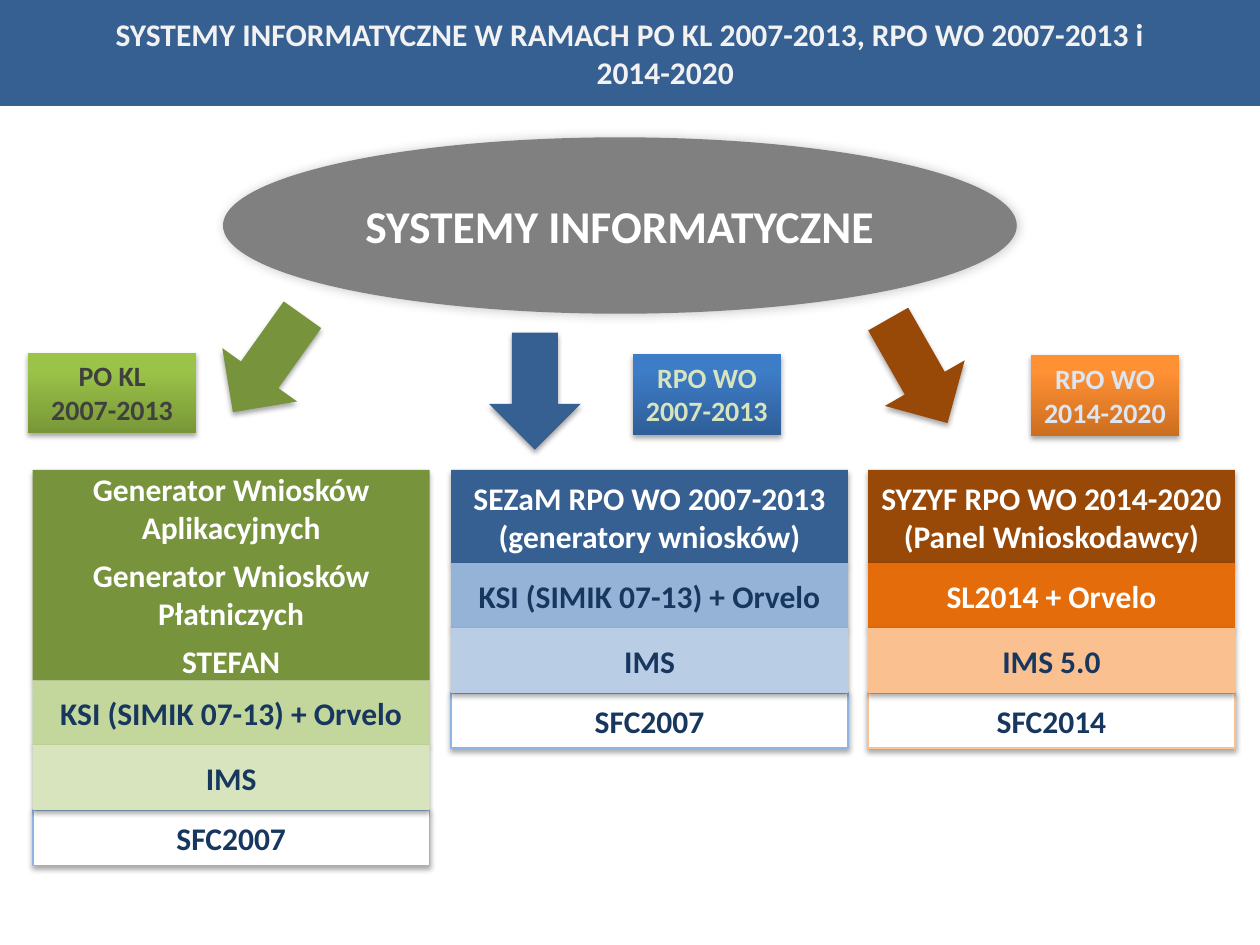
from lxml import etree
from pptx import Presentation
from pptx.dml.color import RGBColor
from pptx.enum.shapes import MSO_SHAPE
from pptx.enum.text import MSO_ANCHOR, MSO_AUTO_SIZE, PP_ALIGN
from pptx.oxml.ns import qn
from pptx.util import Inches, Pt

RECT, OVAL, ARROW = MSO_SHAPE.RECTANGLE, MSO_SHAPE.OVAL, MSO_SHAPE.DOWN_ARROW
TOP, MIDDLE = MSO_ANCHOR.TOP, MSO_ANCHOR.MIDDLE
CENTER, NO_FIT = PP_ALIGN.CENTER, MSO_AUTO_SIZE.NONE
WHITE, NAVY, BLUE, GREEN, BROWN = "FFFFFF", "17375E", "376092", "77933C", "984807"
ROW_HEIGHTS = (0.515, 0.515, 0.44)
STACK_TOP = 3.73


def rgb(value):
    """Turn a hex string into a colour."""
    return RGBColor.from_string(value)


def add_shadow(sp, blur=3.1, dist=1.8, angle=90, alpha=35):
    """Give a shape a soft black outer shadow."""
    sp.shadow.inherit = False
    effects = sp._element.spPr.find(qn("a:effectLst"))
    outer = etree.SubElement(effects, qn("a:outerShdw"), blurRad=str(Pt(blur)),
                             dist=str(Pt(dist)), dir=str(angle * 60000), rotWithShape="0")
    color = etree.SubElement(outer, qn("a:srgbClr"), val="000000")
    etree.SubElement(color, qn("a:alpha"), val=str(alpha * 1000))


def add_text(sp, lines, size, color, after=0, anchor=MIDDLE):
    """Write centred bold paragraphs into a shape."""
    tf = sp.text_frame
    tf.word_wrap, tf.auto_size, tf.vertical_anchor = True, NO_FIT, anchor
    for i, line in enumerate(lines):
        p = tf.add_paragraph() if i else tf.paragraphs[0]
        p.alignment, p.space_after = CENTER, Pt(after)
        r = p.add_run()
        r.text = line
        r.font.name, r.font.size, r.font.bold = "Calibri", Pt(size), True
        r.font.color.rgb = rgb(color)


def add_box(s, kind, box, fill, line=None):
    """Add a preset shape with a solid fill and an optional outline."""
    sp = s.shapes.add_shape(kind, *map(Inches, box))
    sp.fill.solid()
    sp.fill.fore_color.rgb = rgb(fill)
    if line:
        sp.line.color.rgb = rgb(line)
        sp.line.width = Pt(1)
    else:
        sp.line.fill.background()
    return sp


def add_title(s, box, text):
    """Format the title placeholder as a banner with a hanging indent."""
    sp = s.shapes.title
    sp.left, sp.top, sp.width, sp.height = map(Inches, box)
    sp.fill.solid()
    sp.fill.fore_color.rgb = rgb(BLUE)
    add_text(sp, [text], 18, "F2F2F2")
    tf = sp.text_frame
    tf.margin_left = tf.margin_right = Inches(box[2] / 12)
    pPr = tf.paragraphs[0]._p.get_or_add_pPr()
    pPr.set("marL", str(Inches(0.56)))
    pPr.set("indent", str(Inches(-0.56)))


def add_hub(s, box, text):
    """Draw the central ellipse."""
    sp = add_box(s, OVAL, box, "808080")
    add_shadow(sp, 6, 0, 315, 20)
    add_text(sp, [text], 26, WHITE)


def add_arrow(s, box, fill, rotation):
    """Draw a block arrow from the hub towards a stack."""
    sp = add_box(s, ARROW, box, fill)
    sp.rotation = rotation
    add_shadow(sp)


def add_tag(s, box, lines, dark, light, color):
    """Draw a programme label, dark at its foot and light above."""
    sp = add_box(s, RECT, box, light)
    sp.fill.gradient()
    sp.fill.gradient_angle = 90
    for stop, position, value in zip(sp.fill.gradient_stops, (0, 0.8), (dark, light)):
        stop.position, stop.color.rgb = position, rgb(value)
    add_shadow(sp)
    add_text(sp, lines, 16, color, anchor=TOP)


def add_stack(s, x, width, head_height, line, rows):
    """Stack a heading and three systems, the outlined last row beneath the middle ones."""
    heights = (head_height, *ROW_HEIGHTS)
    for i in (0, 3, 1, 2):
        lines, fill, color = rows[i]
        box = (x, STACK_TOP + sum(heights[:i]), width, heights[i])
        sp = add_box(s, RECT, box, fill, line if i == 3 else None)
        add_shadow(sp)
        add_text(sp, lines, 18, color, after=6)


def main():
    """Build the slide and save it."""
    prs = Presentation()
    prs.slide_width, prs.slide_height = Inches(10), Inches(7.5)
    s = prs.slides.add_slide(prs.slide_layouts[5])
    add_title(s, (0, 0, 10, 0.84),
              "SYSTEMY INFORMATYCZNE W RAMACH PO KL 2007-2013, RPO WO 2007-2013 i 2014-2020")

    add_arrow(s, (3.88, 2.64, 0.73, 0.93), BLUE, 0)
    add_arrow(s, (6.92, 2.47, 0.73, 0.95), BROWN, 330.3)
    add_hub(s, (1.77, 1.09, 6.3, 1.4), "SYSTEMY INFORMATYCZNE")

    ksi = ["KSI (SIMIK 07-13) + Orvelo"]
    add_stack(s, 3.58, 3.15, 0.74, "8EB4E3", [
        (["SEZaM RPO WO 2007-2013 (generatory wniosków)"], BLUE, WHITE),
        (ksi, "95B3D7", NAVY),
        (["IMS"], "B9CDE5", NAVY),
        (["SFC2007"], WHITE, NAVY)])
    add_stack(s, 6.89, 2.91, 0.74, "FAC090", [
        (["SYZYF RPO WO 2014-2020 (Panel Wnioskodawcy)"], BROWN, WHITE),
        (["SL2014 + Orvelo"], "E46C0A", WHITE),
        (["IMS 5.0"], "FAC090", NAVY),
        (["SFC2014"], WHITE, NAVY)])
    add_stack(s, 0.26, 3.15, 1.67, "8EB4E3", [
        (["Generator Wniosków Aplikacyjnych", "Generator Wniosków Płatniczych", "STEFAN"],
         GREEN, WHITE),
        (ksi, "C3D69B", NAVY),
        (["IMS"], "D7E4BD", NAVY),
        (["SFC2007"], WHITE, NAVY)])

    add_arrow(s, (1.76, 2.41, 0.73, 0.95), GREEN, 35.5)
    add_tag(s, (0.22, 2.8, 1.34, 0.64), ["PO KL", "2007-2013"], "779737", "9BC348", "404040")
    add_tag(s, (5.02, 2.81, 1.18, 0.64), ["RPO WO 2007-2013"], "2F5F99", "3D7CC7", "D7E4BD")
    add_tag(s, (8.18, 2.82, 1.18, 0.64), ["RPO WO 2014-2020"], "CC6E20", "FF9034", "DCE6F2")
    prs.save("out.pptx")


if __name__ == "__main__":
    main()
